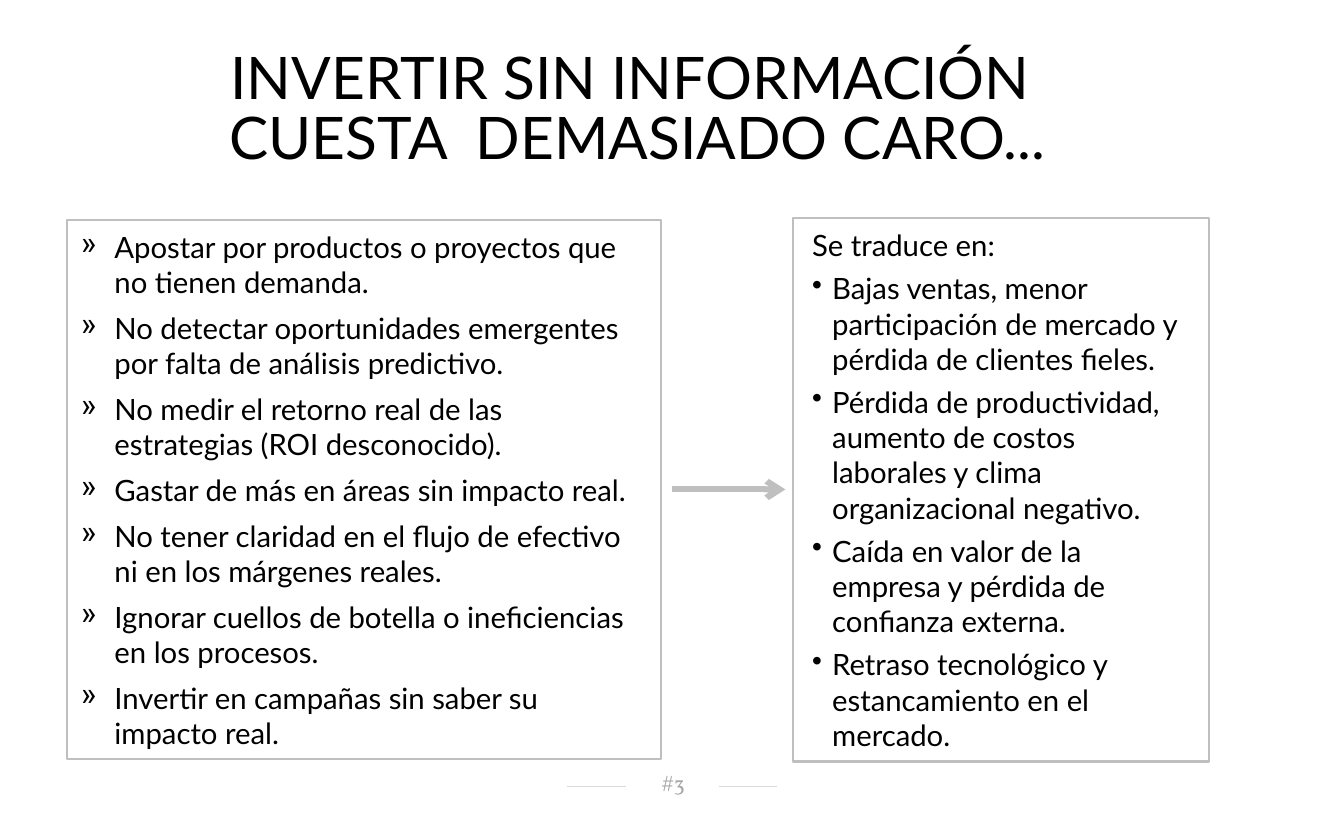
from lxml.etree import SubElement
from pptx import Presentation
from pptx.dml.color import RGBColor
from pptx.enum.shapes import MSO_CONNECTOR as Connector, MSO_SHAPE as Shape
from pptx.enum.text import MSO_ANCHOR as Anchor, MSO_AUTO_SIZE as AutoSize, PP_ALIGN as Align
from pptx.oxml.ns import qn
from pptx.util import Cm, Pt

COLORS = {"text": "000000", "border": "BFBFBF", "rule": "D9D9D9", "number": "A6A6A6"}

TITLE = ["INVERTIR SIN INFORMACIÓN ", "CUESTA  DEMASIADO CARO..."]
CAUSES = [
    "Apostar por productos o proyectos que no tienen demanda.",
    "No detectar oportunidades emergentes por falta de análisis predictivo.",
    "No medir el retorno real de las estrategias (ROI desconocido).",
    "Gastar de más en áreas sin impacto real.",
    "No tener claridad en el flujo de efectivo ni en los márgenes reales.",
    "Ignorar cuellos de botella o ineficiencias en los procesos.",
    "Invertir en campañas sin saber su impacto real.",
]
EFFECTS_INTRO = "Se traduce en:"
EFFECTS = [
    "Bajas ventas, menor participación de mercado y pérdida de clientes fieles.",
    "Pérdida de productividad, aumento de costos laborales y clima organizacional negativo.",
    "Caída en valor de la empresa y pérdida de confianza externa.",
    "Retraso tecnológico y estancamiento en el mercado.",
]
PAGE_NUMBER = "#3"

# left, top, width, height in cm
TITLE_AREA = (1.78, 1.19, 30.2, 3.56)
CAUSES_AREA = (1.78, 5.82, 15.72, 14.27)
EFFECTS_AREA = (20.98, 5.77, 11, 14.38)
NUMBER_AREA = (16.54, 20.42, 2.49, 0.66)
# left, right, y in cm
RULES = [(14.99, 16.56, 20.8), (19.02, 20.57, 20.8)]
ARROW = (17.78, 20.78, 12.95)


def color(name):
    return RGBColor.from_string(COLORS[name])


def set_frame(shape, insets, anchor, auto_size=AutoSize.SHAPE_TO_FIT_TEXT):
    frame = shape.text_frame
    frame.word_wrap = True
    frame.auto_size = auto_size
    frame.vertical_anchor = anchor
    (frame.margin_left, frame.margin_top,
     frame.margin_right, frame.margin_bottom) = map(Cm, insets)
    return frame


def add_paragraph(frame, text, size, align=Align.LEFT, font="Lato", ink="text"):
    first = frame.paragraphs[0]
    paragraph = frame.add_paragraph() if first.runs else first
    paragraph.alignment = align
    run = paragraph.add_run()
    run.text = text
    run.font.name = font
    run.font.size = Pt(size)
    run.font.color.rgb = color(ink)
    return paragraph


def add_bullet(paragraph, character, indent):
    properties = paragraph._p.get_or_add_pPr()
    properties.set("marL", str(Cm(indent)))
    properties.set("indent", str(-Cm(indent)))
    SubElement(properties, qn("a:buChar")).set("char", character)


def add_list_box(slide, area, insets, items, bullet, indent, space_after, intro=None):
    box = slide.shapes.add_shape(Shape.RECTANGLE, *map(Cm, area))
    box.shadow.inherit = False
    box.fill.background()
    box.line.color.rgb = color("border")
    box.line.width = Pt(1.5)
    frame = set_frame(box, insets, Anchor.MIDDLE)
    if intro:
        add_paragraph(frame, intro, 22).space_after = Pt(space_after)
    for item in items:
        paragraph = add_paragraph(frame, item, 22)
        paragraph.space_after = Pt(space_after)
        add_bullet(paragraph, bullet, indent)


def add_horizontal_line(slide, left, right, y, ink, width, arrow=False):
    line = slide.shapes.add_connector(
        Connector.STRAIGHT, Cm(left), Cm(y), Cm(right), Cm(y))
    line.line.color.rgb = color(ink)
    line.line.width = Pt(width)
    if arrow:
        SubElement(line.line._get_or_add_ln(), qn("a:tailEnd")).set("type", "arrow")
    SubElement(line._element.spPr, qn("a:effectLst"))


def main():
    presentation = Presentation()
    presentation.slide_width, presentation.slide_height = Cm(35.56), Cm(21.59)
    slide = presentation.slides.add_slide(presentation.slide_layouts[6])

    for rule in RULES:
        add_horizontal_line(slide, *rule, "rule", 0.75)

    title = slide.shapes.add_textbox(*map(Cm, TITLE_AREA))
    title_frame = set_frame(title, (0.36, 0.18, 0.36, 0.18), Anchor.TOP)
    for text in TITLE:
        add_paragraph(title_frame, text, 44, Align.CENTER).line_spacing = 0.85

    add_list_box(slide, CAUSES_AREA, (0.36, 0.18, 0.36, 0.18), CAUSES, "»", 0.89, 8)

    number = slide.shapes.add_textbox(*map(Cm, NUMBER_AREA))
    number_frame = set_frame(number, (0.3, 0.05, 0.25, 0.13), Anchor.MIDDLE, AutoSize.NONE)
    add_paragraph(number_frame, PAGE_NUMBER, 16, Align.CENTER, "Vollkorn", "number")

    add_list_box(slide, EFFECTS_AREA, (0.51, 0.18, 0.41, 0.18), EFFECTS, "•", 0.53, 6,
                 EFFECTS_INTRO)
    add_horizontal_line(slide, *ARROW, "border", 4.5, arrow=True)

    presentation.save("out.pptx")


if __name__ == "__main__":
    main()
